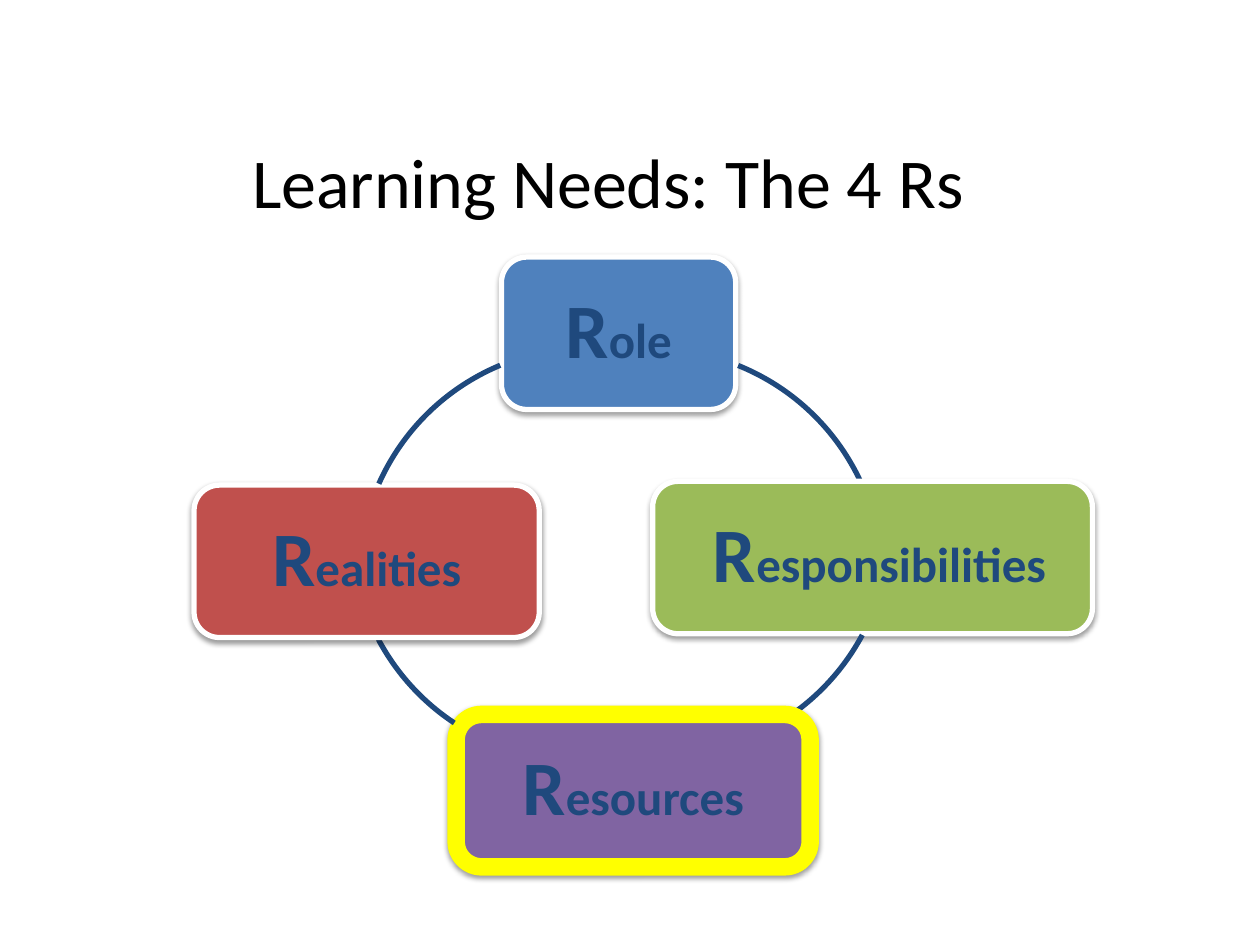
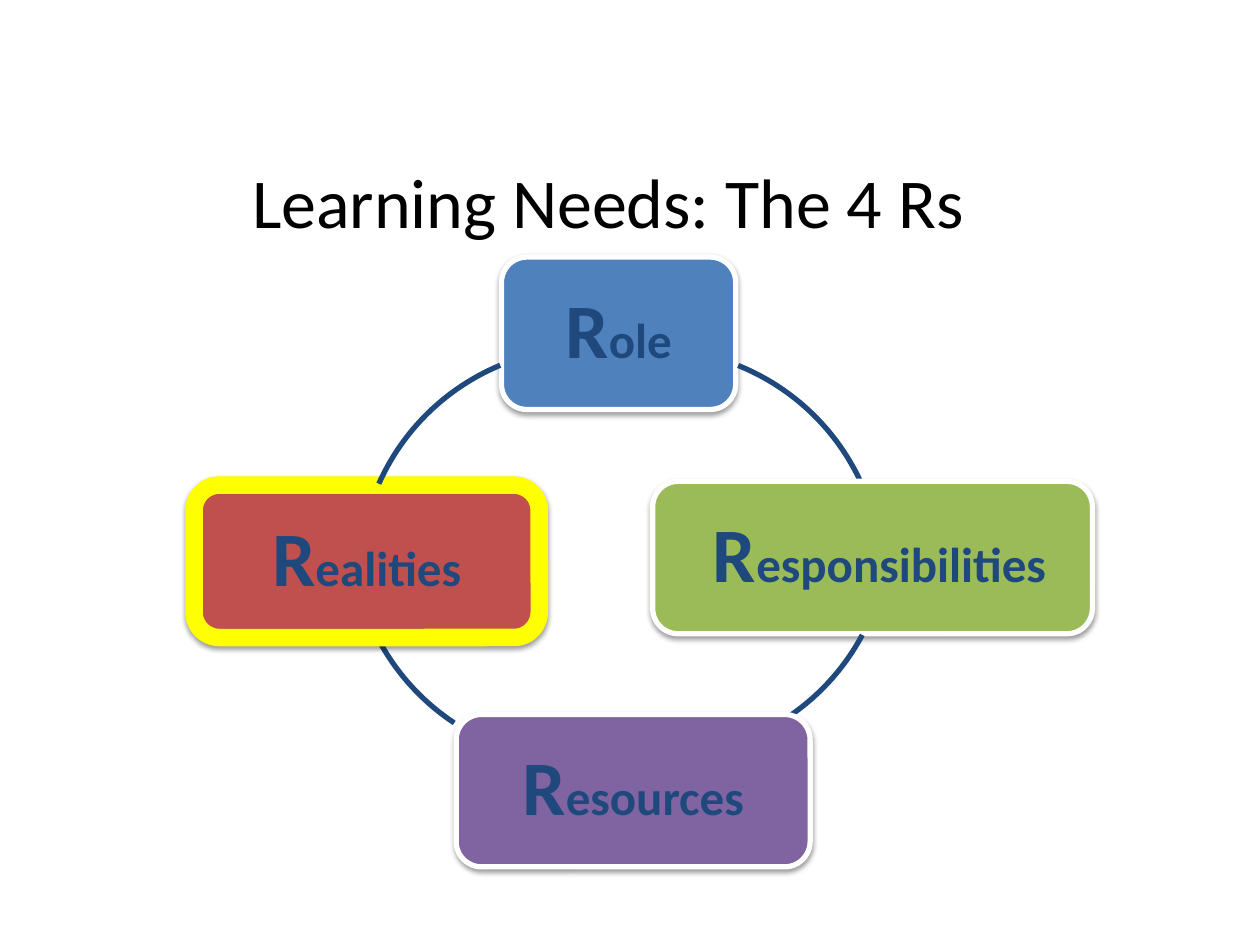
"""Build two slides of the 4 Rs cycle, each highlighting one R."""
from dataclasses import dataclass

from lxml import etree
from pptx import Presentation
from pptx import util as u
from pptx.dml.color import RGBColor
from pptx.enum import shapes, text
from pptx.oxml import ns

COLORS = {
    "title": "000000", "ink": "1F497D", "border": "FFFFFF", "highlight": "FFFF00",
    "shadow": "000000", "role": "4F81BD", "responsibilities": "9BBB59",
    "resources": "8064A2", "realities": "C0504D",
}
FONT = "Calibri"
BOX_HEIGHT = 1.21
ARC_SIZE = 3.64
DEGREE = 0.6


@dataclass(frozen=True)
class Need:
    word: str
    left: float
    top: float
    width: float
    margin_left: float = 0.18
    margin_right: float = 0.18


@dataclass(frozen=True)
class Arc:
    left: float
    top: float
    start: float
    end: float


@dataclass(frozen=True)
class Page:
    title_top: float
    highlighted: str


CYCLE = [
    (Need("Role", 3.98, 2.04, 1.86), Arc(3.36, 2.77, 291.9, 334.7)),
    (Need("Responsibilities", 5.18, 3.82, 3.49, 0.26, 0.15), Arc(3.42, 2.36, 28.2, 55.1)),
    (Need("Resources", 3.62, 5.67, 2.81), Arc(2.79, 2.4, 123.5, 152)),
    (Need("Realities", 1.54, 3.85, 2.74), Arc(2.85, 2.76, 204, 247.4)),
]
PAGES = [Page(0.81, "Resources"), Page(0.97, "Realities")]


def color(name: str) -> RGBColor:
    return RGBColor.from_string(COLORS[name])


def style_span(span, size: float, ink: str, bold: bool) -> None:
    span.font.name = FONT
    span.font.size = u.Pt(size)
    span.font.bold = bold
    span.font.color.rgb = color(ink)


def add_title(page, top: float) -> None:
    box = page.shapes.add_textbox(u.Inches(0.5), u.Inches(top), u.Inches(9), u.Inches(1.25))
    frame = box.text_frame
    frame.word_wrap = True
    frame.vertical_anchor = text.MSO_ANCHOR.MIDDLE
    frame.margin_right = u.Inches(0.45)
    frame.text = "Learning Needs: The 4 Rs"
    para = frame.paragraphs[0]
    para.alignment = text.PP_ALIGN.CENTER
    style_span(para.runs[0], 40, "title", False)


def add_soft_shadow(box) -> None:
    box.shadow.inherit = False
    effects = box._element.spPr.find(ns.qn("a:effectLst"))
    shadow = etree.SubElement(effects, ns.qn("a:outerShdw"), blurRad=str(u.Pt(3.1)),
                              dist=str(u.Pt(1.6)), dir="5400000", rotWithShape="0")
    tint = etree.SubElement(shadow, ns.qn("a:srgbClr"), val=COLORS["shadow"])
    etree.SubElement(tint, ns.qn("a:alpha"), val="38000")


def add_need(page, need: Need, highlighted: bool) -> None:
    box = page.shapes.add_shape(
        shapes.MSO_SHAPE.ROUNDED_RECTANGLE, u.Inches(need.left), u.Inches(need.top),
        u.Inches(need.width), u.Inches(BOX_HEIGHT))
    add_soft_shadow(box)
    box.fill.solid()
    box.fill.fore_color.rgb = color(need.word.lower())
    box.line.color.rgb = color("highlight" if highlighted else "border")
    box.line.width = u.Pt(10 if highlighted else 3)
    frame = box.text_frame
    frame.word_wrap = True
    frame.vertical_anchor = text.MSO_ANCHOR.MIDDLE
    frame.margin_left = u.Inches(need.margin_left)
    frame.margin_right = u.Inches(need.margin_right)
    frame.margin_top = frame.margin_bottom = u.Inches(0.18)
    para = frame.paragraphs[0]
    para.alignment = text.PP_ALIGN.CENTER
    para.line_spacing = 0.9
    for part, size in ((need.word[0], 44), (need.word[1:], 28)):
        span = para.add_run()
        span.text = part
        style_span(span, size, "ink", True)


def add_arc(page, arc: Arc) -> None:
    curve = page.shapes.add_shape(
        shapes.MSO_SHAPE.ARC, u.Inches(arc.left), u.Inches(arc.top),
        u.Inches(ARC_SIZE), u.Inches(ARC_SIZE))
    curve.shadow.inherit = False
    curve.fill.background()
    curve.line.color.rgb = color("ink")
    curve.line.width = u.Pt(3)
    curve.adjustments[0] = arc.start * DEGREE
    curve.adjustments[1] = arc.end * DEGREE


def main() -> None:
    deck = Presentation()
    deck.slide_width, deck.slide_height = u.Inches(10), u.Inches(7.5)
    for plan in PAGES:
        page = deck.slides.add_slide(deck.slide_layouts[6])
        add_title(page, plan.title_top)
        for need, arc in CYCLE:
            add_need(page, need, need.word == plan.highlighted)
            add_arc(page, arc)
    deck.save("out.pptx")


if __name__ == "__main__":
    main()
